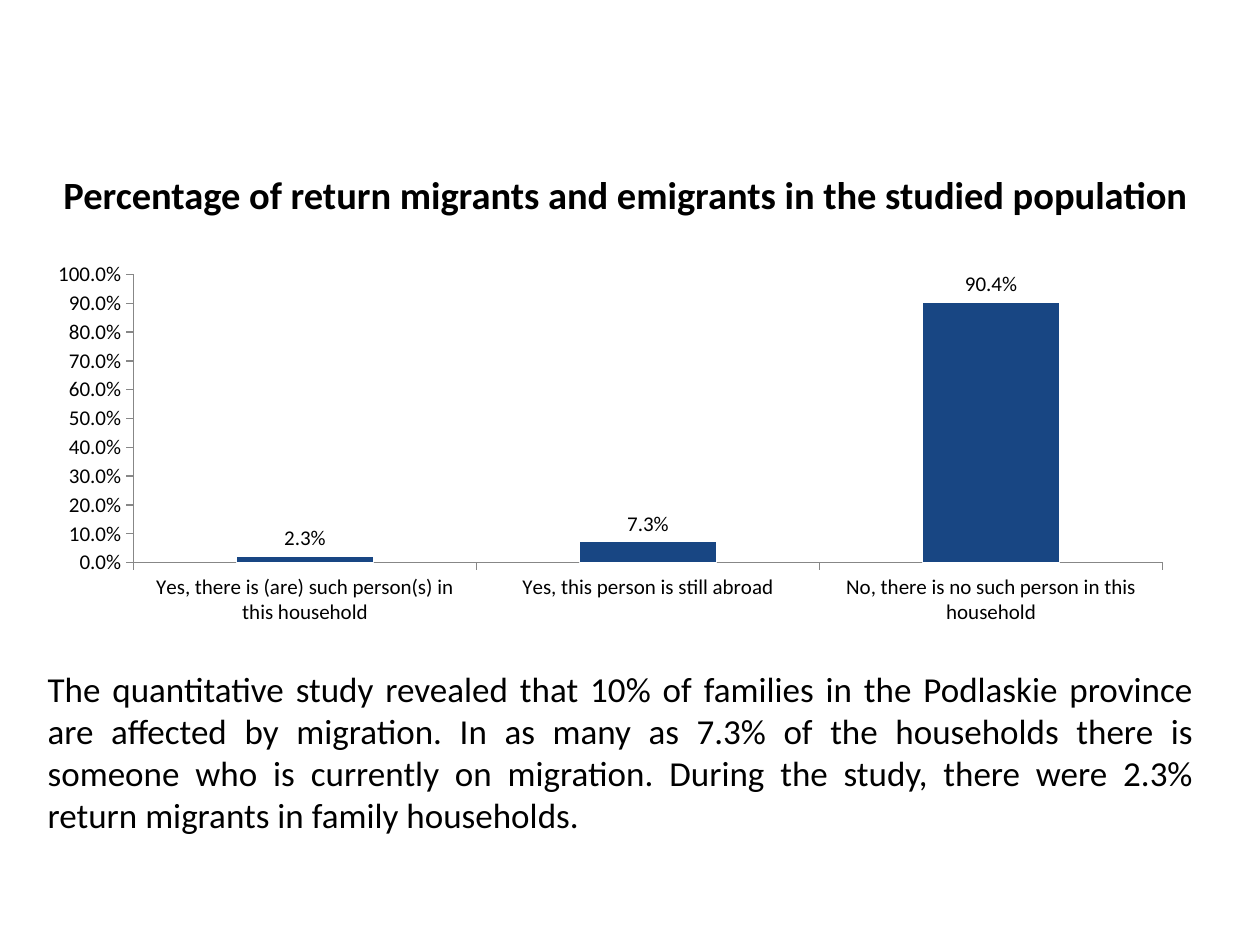
from pptx import Presentation
from pptx.chart.data import CategoryChartData
from pptx.dml.color import RGBColor
from pptx.enum.chart import XL_CHART_TYPE, XL_LABEL_POSITION, XL_TICK_MARK
from pptx.enum.text import MSO_AUTO_SIZE, PP_ALIGN
from pptx.util import Cm, Pt

BLACK = RGBColor(0x00, 0x00, 0x00)
WHITE = RGBColor(0xFF, 0xFF, 0xFF)
GREY = RGBColor(0x87, 0x87, 0x87)
NAVY = RGBColor(0x18, 0x46, 0x83)
FONT = "Calibri"
PERCENT = "0.0%"

TITLE = "Percentage of return migrants and emigrants in the studied population"
FINDINGS = (
    "The quantitative study revealed that 10% of families in the Podlaskie province "
    "are affected by migration. In as many as 7.3% of the households there is "
    "someone who is currently on migration. During the study, there were 2.3% "
    "return migrants in family households."
)
HOUSEHOLDS = {
    "Yes, there is (are) such person(s) in this household": 0.023,
    "Yes, this person is still abroad": 0.073,
    "No, there is no such person in this household": 0.904,
}


def style_font(font, size, bold=False):
    """Apply the slide's typeface and colour to a font."""
    font.name = FONT
    font.size = Pt(size)
    font.bold = bold
    font.color.rgb = BLACK


def add_text(slide, box, text, size=20, bold=False, align=PP_ALIGN.LEFT):
    """Place one wrapped paragraph in the given box."""
    frame = slide.shapes.add_textbox(*box).text_frame
    frame.word_wrap = True
    frame.auto_size = MSO_AUTO_SIZE.SHAPE_TO_FIT_TEXT
    para = frame.paragraphs[0]
    para.alignment = align
    span = para.add_run()
    span.text = text
    style_font(span.font, size, bold)


def style_axis(axis):
    """Give an axis its text, grey line and outward ticks."""
    axis.has_major_gridlines = False
    axis.major_tick_mark = XL_TICK_MARK.OUTSIDE
    axis.minor_tick_mark = XL_TICK_MARK.NONE
    axis.format.line.color.rgb = GREY
    axis.format.line.width = Pt(0.75)
    style_font(axis.tick_labels.font, 12)


def add_household_chart(slide, box):
    """Place the column chart of household answers in the given box."""
    data = CategoryChartData(number_format=PERCENT)
    data.categories = list(HOUSEHOLDS)
    data.add_series("Series 1", list(HOUSEHOLDS.values()))
    chart = slide.shapes.add_chart(XL_CHART_TYPE.COLUMN_CLUSTERED, *box, data).chart
    chart.has_legend = False
    chart.has_title = False
    style_font(chart.font, 10)

    for axis in (chart.category_axis, chart.value_axis):
        style_axis(axis)
    scale = chart.value_axis
    scale.minimum_scale, scale.maximum_scale, scale.major_unit = 0, 1, 0.1
    scale.tick_labels.number_format = PERCENT
    scale.tick_labels.number_format_is_linked = False

    plot = chart.plots[0]
    plot.gap_width = 150
    plot.vary_by_categories = False
    columns = plot.series[0]
    columns.invert_if_negative = False
    columns.format.fill.solid()
    columns.format.fill.fore_color.rgb = NAVY
    columns.format.line.color.rgb = WHITE
    columns.format.line.width = Pt(0.75)
    labels = columns.data_labels
    labels.show_value = True
    labels.number_format = PERCENT
    labels.number_format_is_linked = False
    labels.position = XL_LABEL_POSITION.OUTSIDE_END
    style_font(labels.font, 12)


def build_findings_slide(deck):
    """Add the slide with its title, chart and findings."""
    slide = deck.slides.add_slide(deck.slide_layouts[6])
    left = Cm(0.71)
    add_text(slide, (left, Cm(3.33), Cm(23.8), Cm(1.19)), TITLE,
             size=22, bold=True, align=PP_ALIGN.CENTER)
    add_household_chart(slide, (left, Cm(5.13), Cm(23.19), Cm(7.62)))
    add_text(slide, (left, Cm(13.33), Cm(23.6), Cm(3.68)), FINDINGS,
             align=PP_ALIGN.JUSTIFY)


def main():
    """Build and save the deck."""
    deck = Presentation()
    deck.slide_width, deck.slide_height = Cm(25.4), Cm(19.05)
    build_findings_slide(deck)
    deck.save("out.pptx")


if __name__ == "__main__":
    main()
